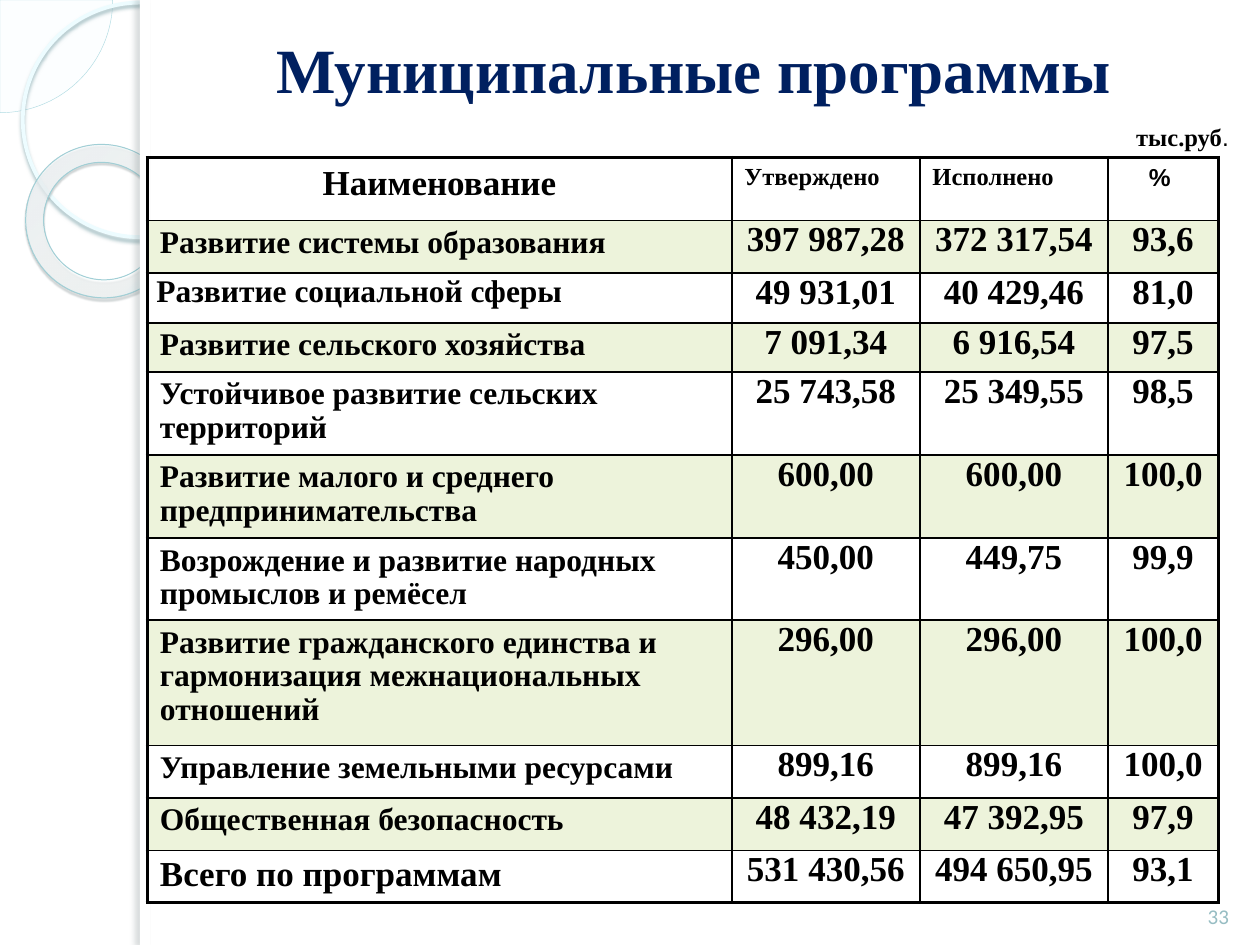
from lxml import etree
from pptx import Presentation
from pptx import util as u
from pptx.dml.color import RGBColor
from pptx.enum import shapes, text
from pptx.oxml import ns

COLORS = {
    "black": "000000", "white": "FFFFFF", "title": "002060", "band": "EDF3DB",
    "number": "97BDC3", "pie": "F8FEFF", "pie_line": "AFDBE2",
    "ring": "EDFCFF", "ring_shadow": "9CB9BE", "donut_line": "A1CFD6",
    "donut_shadow": "4B5E61", "edge_shadow": "6C7A7C",
}
SERIF = "Times New Roman"
HEADINGS = ["Наименование", "Утверждено", "Исполнено", "% "]
PROGRAMS = [
    ("Развитие системы образования", "397 987,28", "372 317,54", "93,6"),
    (" Развитие социальной сферы", "49 931,01", "40 429,46", "81,0"),
    ("Развитие сельского хозяйства", "7 091,34", "6 916,54", "97,5"),
    ("Устойчивое развитие сельских территорий", "25 743,58", "25 349,55", "98,5"),
    ("Развитие малого и среднего предпринимательства", "600,00", "600,00", "100,0"),
    ("Возрождение и развитие народных промыслов и ремёсел", "450,00", "449,75", "99,9"),
    ("Развитие гражданского единства и гармонизация межнациональных отношений",
     "296,00", "296,00", "100,0"),
    ("Управление земельными ресурсами", "899,16", "899,16", "100,0"),
    ("Общественная безопасность", "48 432,19", "47 392,95", "97,9"),
    ("Всего по программам", "531 430,56", "494 650,95", "93,1"),
]
COLUMN_WIDTHS = [334, 107.5, 107.5, 63]
ROW_HEIGHTS = [36, 30, 28.5, 28, 47.5, 47.5, 47, 71.5, 30, 30, 30]


def rgb(name):
    return RGBColor.from_string(COLORS[name])


def child(parent, tag, **attributes):
    element = etree.SubElement(parent, ns.qn("a:" + tag))
    for key, value in attributes.items():
        element.set(key, str(value))
    return element


def add_color(parent, color, alpha=100):
    child(child(parent, "srgbClr", val=color), "alpha", val=alpha * 1000)


def write(frame, content, size=18, font=SERIF, color="black", bold=True,
          align=text.PP_ALIGN.LEFT, anchor=text.MSO_ANCHOR.TOP, spacing=None):
    """Append a run to the first paragraph and format it."""
    frame.vertical_anchor = anchor
    para = frame.paragraphs[0]
    para.alignment = align
    para.line_spacing = spacing
    span = para.add_run()
    span.text = content
    span.font.size = u.Pt(size)
    span.font.name = font
    span.font.bold = bold
    span.font.color.rgb = rgb(color)


def add_decoration(page, kind, left, top, width, height, fill=None, line=None,
                   weight=1, shadow=None):
    shape = page.shapes.add_shape(kind, *map(u.Pt, (left, top, width, height)))
    shape.shadow.inherit = False
    if fill:
        shape.fill.solid()
        shape.fill.fore_color.rgb = rgb(fill)
    else:
        shape.fill.background()
    if line:
        shape.line.color.rgb = rgb(line)
        shape.line.width = u.Pt(weight)
    else:
        shape.line.fill.background()
    if shadow:
        color, alpha, blur, distance, angle = shadow
        effects = shape._element.spPr.find(ns.qn("a:effectLst"))
        outer = child(effects, "outerShdw", blurRad=u.Pt(blur), dist=u.Pt(distance),
                      dir=angle * 60000, algn="tl", rotWithShape=0)
        add_color(outer, COLORS[color], alpha)
    return shape


def add_background(page):
    kinds = shapes.MSO_SHAPE
    # Quarter disc in the corner
    pie = add_decoration(page, kinds.PIE, -64.4, -64.4, 128.8, 128.8, "pie", "pie_line", 0.25)
    pie.adjustments[0], pie.adjustments[1] = 0, 54
    solid = pie._element.spPr.find(ns.qn("a:solidFill"))
    child(solid[0], "alpha", val=33000)

    # Thin ring and glassy donut
    add_decoration(page, kinds.OVAL, 13, 1.5, 134, 134, None, "ring", 2.15,
                   ("ring_shadow", 85, 2, 2, 90))
    donut = add_decoration(page, kinds.DONUT, 14.4, 82.8, 88.6, 87.1, None, "donut_line",
                           0.58, ("donut_shadow", 35, 1, 1.2, 75))
    donut.rotation = 38.6
    donut.adjustments[0] = 0.118
    properties = donut._element.spPr
    gradient = etree.Element(ns.qn("a:gradFill"), rotWithShape="1")
    stops = child(gradient, "gsLst")
    for position, color, alpha in [(0, "F9FEFF", 70), (70, "FDFFFF", 55), (100, "9EF2FF", 60)]:
        add_color(child(stops, "gs", pos=position * 1000), color, alpha)
    circle = child(gradient, "path", path="circle")
    child(circle, "fillToRect", l=-408000, t=-50000, r=508000, b=150000)
    properties.replace(properties.find(ns.qn("a:noFill")), gradient)

    # White sheet with a shaded left edge
    add_decoration(page, kinds.RECTANGLE, 80, 0, 640, 540, "white")
    add_decoration(page, kinds.RECTANGLE, 80, 0, 5.8, 540, "white",
                   shadow=("edge_shadow", 25, 3, 3, 180))


def add_title(page):
    title = page.shapes.title
    title.left, title.top, title.width, title.height = map(u.Pt, (102.2, 12.2, 588.2, 54))
    title.fill.solid()
    title.fill.fore_color.rgb = rgb("white")
    write(title.text_frame, "Муниципальные программы", size=36, color="title",
          align=text.PP_ALIGN.CENTER, anchor=text.MSO_ANCHOR.MIDDLE)
    page.shapes._spTree.append(title._element)  # above the white sheet


def add_textbox(page, left, top, width, height):
    box = page.shapes.add_textbox(*map(u.Pt, (left, top, width, height)))
    box.text_frame.word_wrap = True
    return box.text_frame


def set_margins(cell, left, top, right, bottom):
    cell.margin_left, cell.margin_top = u.Pt(left), u.Pt(top)
    cell.margin_right, cell.margin_bottom = u.Pt(right), u.Pt(bottom)


def set_borders(cell, outer_sides):
    properties = cell._tc.get_or_add_tcPr()
    for index, side in enumerate("LRTB"):
        width = 2.25 if side in outer_sides else 1
        border = etree.Element(ns.qn("a:ln" + side), w=str(u.Pt(width)))
        add_color(child(border, "solidFill"), COLORS["black"])
        properties.insert(index, border)


def write_cell(cell, content, row, column):
    center, left = text.PP_ALIGN.CENTER, text.PP_ALIGN.LEFT
    frame = cell.text_frame
    if row == 0:
        write(frame, content, size=14 if column else 20,
              font="Arial" if column == 3 else SERIF,
              align=center if column in (0, 3) else left)
    elif column:
        set_margins(cell, 5, 0, 5, 0)
        write(frame, content, size=20, align=center, anchor=text.MSO_ANCHOR.BOTTOM)
    elif content.startswith(" "):
        set_margins(cell, 0.7, 0.7, 0.7, 0)
        write(frame, content, anchor=text.MSO_ANCHOR.MIDDLE)
    else:
        write(frame, content, size=20 if row == len(PROGRAMS) else 18, spacing=0.96)


def add_program_table(page):
    rows = [HEADINGS, *PROGRAMS]
    frame = page.shapes.add_table(len(rows), len(HEADINGS), u.Pt(84.2), u.Pt(90),
                                  u.Pt(sum(COLUMN_WIDTHS)), u.Pt(sum(ROW_HEIGHTS)))
    table = frame.table
    for column, width in zip(table.columns, COLUMN_WIDTHS):
        column.width = u.Pt(width)
    for line, height in zip(table.rows, ROW_HEIGHTS):
        line.height = u.Pt(height)
    for r, values in enumerate(rows):
        for c, value in enumerate(values):
            cell = table.cell(r, c)
            write_cell(cell, value, r, c)
            if r == 0:
                cell.fill.background()
            else:
                cell.fill.solid()
                cell.fill.fore_color.rgb = rgb("band" if r % 2 else "white")
            edges = {"L": c == 0, "R": c == len(values) - 1,
                     "T": r == 0, "B": r == len(rows) - 1}
            set_borders(cell, [side for side, outer in edges.items() if outer])


def main():
    deck = Presentation()
    deck.slide_width, deck.slide_height = u.Pt(720), u.Pt(540)
    page = deck.slides.add_slide(deck.slide_layouts[5])
    add_background(page)
    add_title(page)
    add_program_table(page)
    # Slide number and unit of measure
    write(add_textbox(page, 678.2, 496.8, 36, 37.4), "33", size=12, font="Calibri",
          color="number", bold=False, align=text.PP_ALIGN.CENTER,
          anchor=text.MSO_ANCHOR.BOTTOM)
    unit = add_textbox(page, 642.2, 66.2, 69.1, 24.5)
    write(unit, "тыс.руб", size=14)
    write(unit, ".", size=14, font="Arial", bold=False)
    deck.save("out.pptx")


if __name__ == "__main__":
    main()
